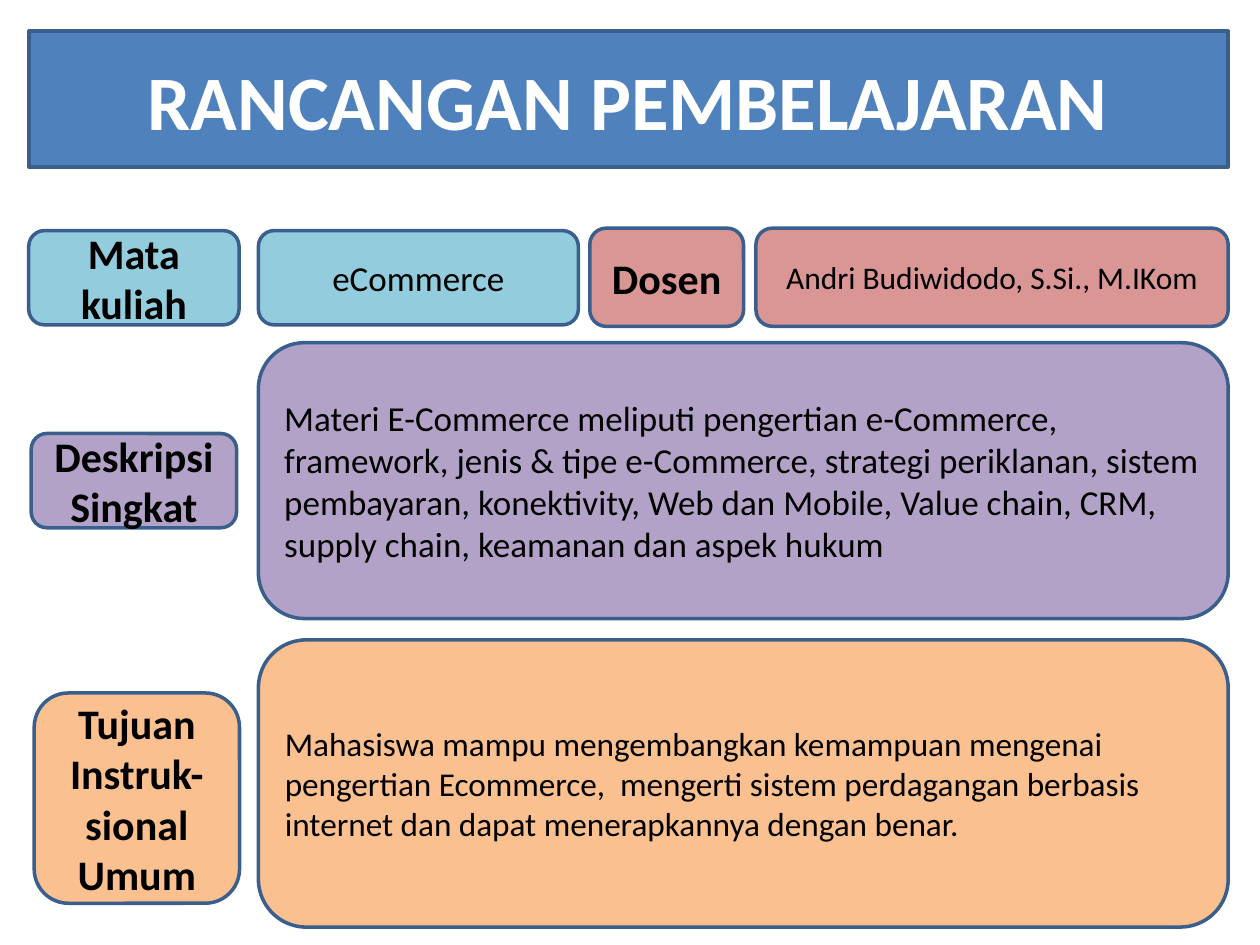
import pptx
import pptx.util
import pptx.dml.color
import pptx.enum.shapes
import pptx.enum.text
import pptx.oxml

Cm = pptx.util.Cm
Pt = pptx.util.Pt
RGBColor = pptx.dml.color.RGBColor
ALIGN = pptx.enum.text.PP_ALIGN

BLUE = RGBColor(0x4F, 0x81, 0xBD)
OUTLINE = RGBColor(0x3A, 0x5F, 0x8C)
AQUA = RGBColor(0x93, 0xCD, 0xDD)
ROSE = RGBColor(0xD9, 0x96, 0x94)
PURPLE = RGBColor(0xB3, 0xA2, 0xC7)
ORANGE = RGBColor(0xFA, 0xC0, 0x90)
WHITE = RGBColor(0xFF, 0xFF, 0xFF)
BLACK = RGBColor(0x00, 0x00, 0x00)

# Shared edges of the layout, in centimetres
LEFT, CONTENT_LEFT, RIGHT = 0.58, 5.21, 24.76
CONTENT_WIDTH = RIGHT - CONTENT_LEFT

ROUNDED = ('<a:prstGeom xmlns:a="http://schemas.openxmlformats.org/drawingml/2006/main" '
           'prst="roundRect"><a:avLst/></a:prstGeom>')


def set_values(target, values):
    for name, value in values.items():
        setattr(target, name, value)


def paint(box, fill):
    box.fill.solid()
    box.fill.fore_color.rgb = fill
    box.line.color.rgb = OUTLINE
    box.line.width = Pt(2)


def write(box, text, size, color=BLACK, bold=False, align=ALIGN.CENTER):
    set_values(box.text_frame, {
        "word_wrap": True,
        "auto_size": pptx.enum.text.MSO_AUTO_SIZE.NONE,
        "vertical_anchor": pptx.enum.text.MSO_ANCHOR.MIDDLE,
    })
    para = box.text_frame.paragraphs[0]
    para.alignment = align
    span = para.add_run()
    span.text = text
    set_values(span.font, {"name": "Calibri", "size": Pt(size), "bold": bold})
    span.font.color.rgb = color


def add_title(page, text, left, top, width, height):
    title = page.shapes.title
    set_values(title, {"left": Cm(left), "top": Cm(top),
                       "width": Cm(width), "height": Cm(height)})
    # Give the placeholder rounded corners
    title.element.spPr.append(pptx.oxml.parse_xml(ROUNDED))
    paint(title, BLUE)
    write(title, text, 44, WHITE, True)


def add_box(page, area, fill, text, **style):
    box = page.shapes.add_shape(
        pptx.enum.shapes.MSO_SHAPE.ROUNDED_RECTANGLE, *map(Cm, area))
    box.shadow.inherit = False
    paint(box, fill)
    write(box, text, **style)


def main():
    deck = pptx.Presentation()
    deck.slide_width, deck.slide_height = Cm(25.4), Cm(19.05)
    page = deck.slides.add_slide(deck.slide_layouts[5])

    label = {"size": 24, "bold": True}

    # Title banner
    add_title(page, "RANCANGAN PEMBELAJARAN", LEFT, 0.63, RIGHT - LEFT, 2.74)

    # Course and lecturer
    add_box(page, (LEFT, 4.65, 4.24, 1.9), AQUA, "Mata kuliah", **label)
    add_box(page, (CONTENT_LEFT, 4.65, 6.45, 1.9), AQUA, "eCommerce", size=20)
    add_box(page, (11.89, 4.6, 3.1, 1.98), ROSE, "Dosen", **label)
    add_box(page, (15.24, 4.6, RIGHT - 15.24, 1.98), ROSE,
            "Andri Budiwidodo, S.Si., M.IKom", size=18)

    # Short description
    add_box(page, (0.63, 8.74, 4.14, 1.9), PURPLE, "Deskripsi Singkat", **label)
    add_box(page, (CONTENT_LEFT, 6.91, CONTENT_WIDTH, 5.56), PURPLE,
            "Materi E-Commerce meliputi pengertian e-Commerce, framework, "
            "jenis & tipe e-Commerce, strategi periklanan, sistem pembayaran, "
            "konektivity, Web dan Mobile, Value chain, CRM, supply chain, "
            "keamanan dan aspek hukum", size=20, align=ALIGN.LEFT)

    # General learning objective
    add_box(page, (0.69, 13.97, 4.14, 4.24), ORANGE,
            "Tujuan Instruk-sional Umum", **label)
    add_box(page, (CONTENT_LEFT, 12.9, CONTENT_WIDTH, 5.79), ORANGE,
            "Mahasiswa mampu mengembangkan kemampuan mengenai pengertian "
            "Ecommerce,  mengerti sistem perdagangan berbasis internet dan "
            "dapat menerapkannya dengan benar.", size=19, align=ALIGN.LEFT)

    deck.save("out.pptx")


if __name__ == "__main__":
    main()
